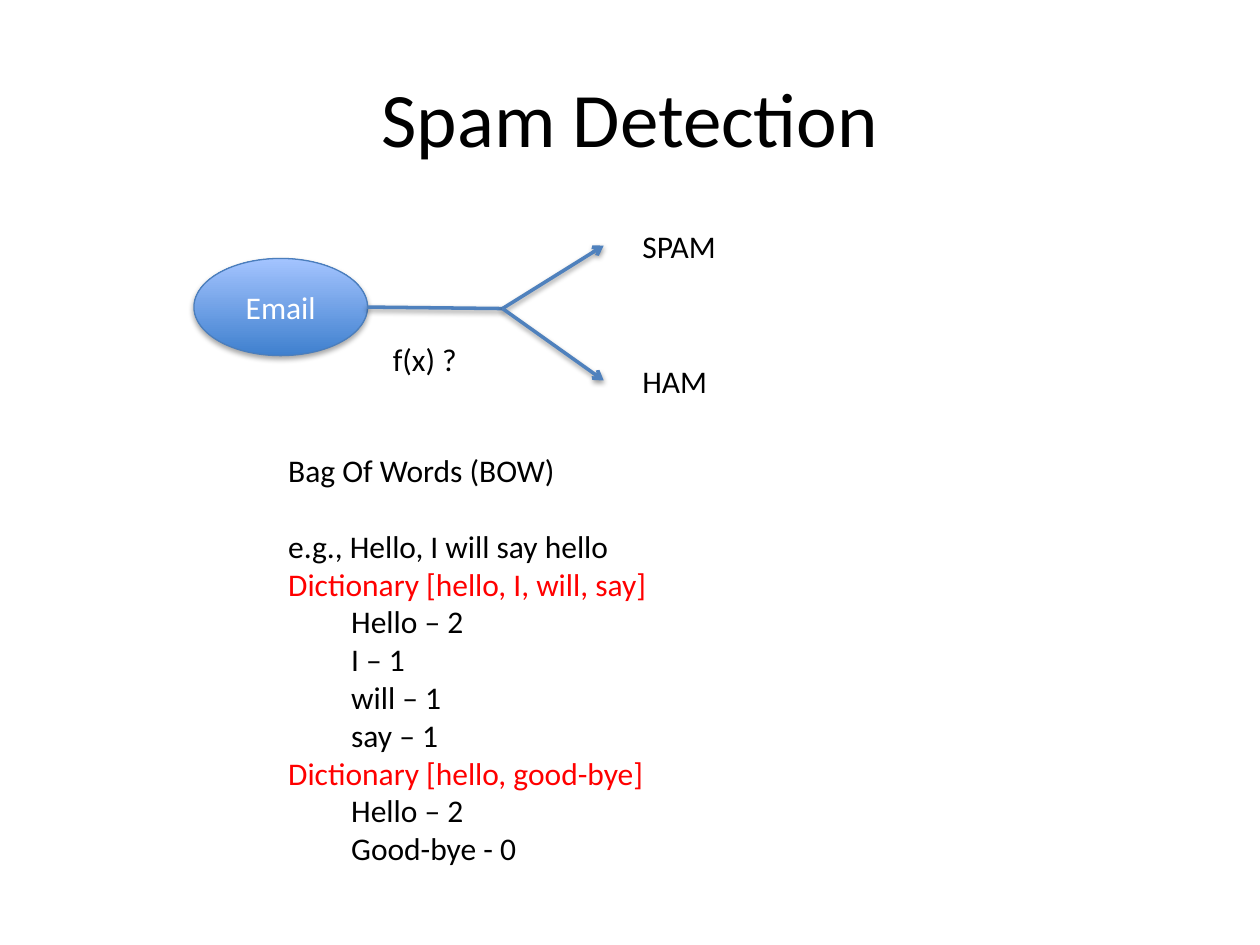
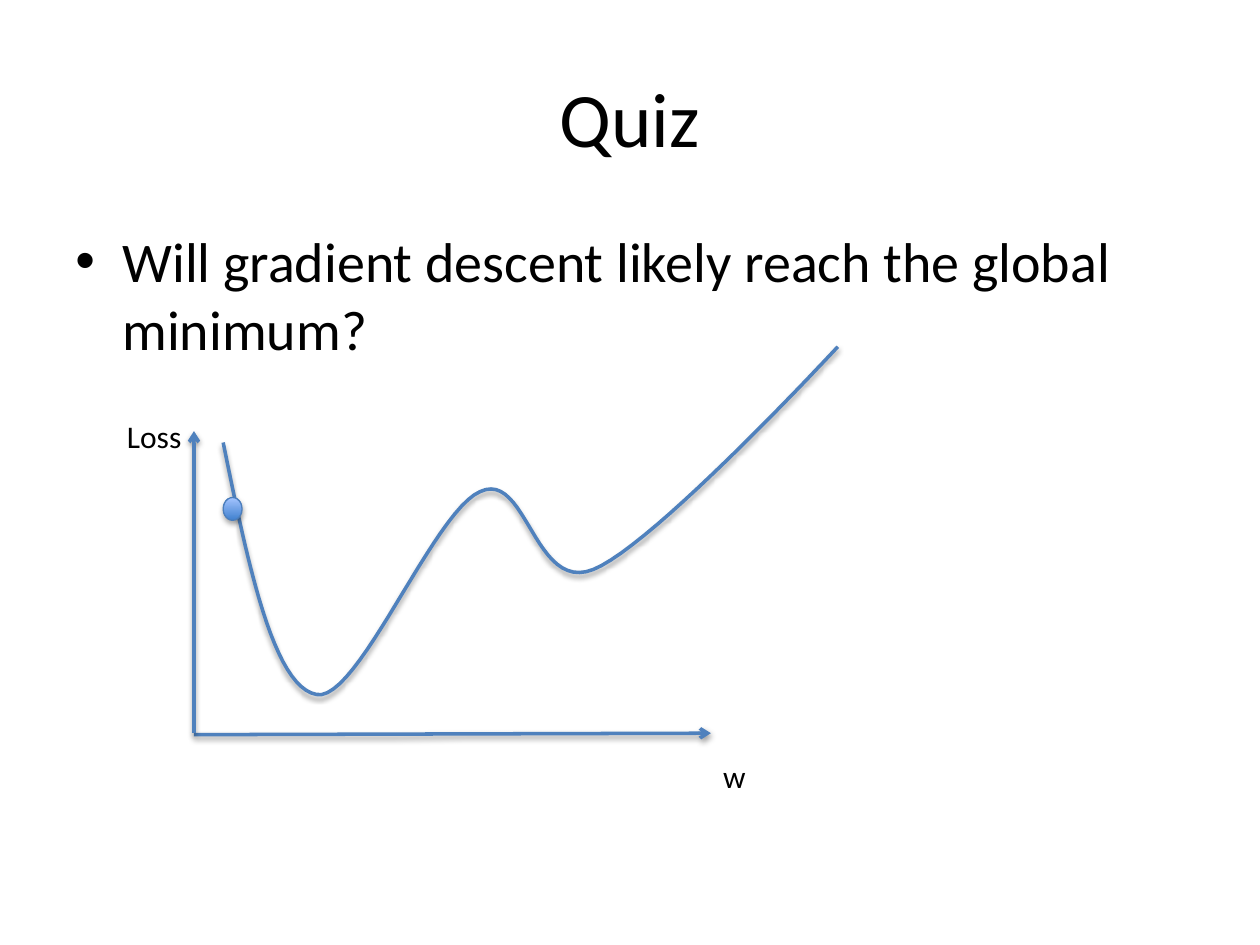
from lxml import etree
from pptx import Presentation
from pptx.dml.color import RGBColor
from pptx.enum.shapes import MSO_CONNECTOR, MSO_SHAPE
from pptx.enum.text import MSO_ANCHOR, PP_ALIGN
from pptx.oxml.ns import qn
from pptx.util import Cm, Pt

BLACK = RGBColor(0x00, 0x00, 0x00)
WHITE = RGBColor(0xFF, 0xFF, 0xFF)
RED = RGBColor(0xFF, 0x00, 0x00)
BLUE = RGBColor(0x4F, 0x81, 0xBD)
RIM_BLUE = RGBColor(0x4B, 0x7E, 0xBC)
DEEP_BLUE = RGBColor(0x3F, 0x80, 0xCE)
PALE_BLUE = RGBColor(0xA4, 0xC4, 0xFF)

FONT = "Calibri"
TITLE_BOX = (1.27, 0.76, 22.86, 3.18)
LABEL_HEIGHT = 1.03
OVAL_SHADOW = {"alpha": 35, "distance": 1.8}
LINE_SHADOW = {"alpha": 38, "distance": 1.6}

# Lengths are in centimetres; boxes are left, top, width, height.
SPAM_TITLE = "Spam Detection"
EMAIL, EMAIL_BOX = "Email", (3.91, 5.21, 3.5, 1.96)
FORK = (10.13, 6.22)
SPAM_ARROWS = [
    ((7.4, 6.19), FORK, False),
    (FORK, (12.17, 4.95), True),
    (FORK, (12.17, 7.67), True),
]
SPAM_LABELS = [
    ("SPAM", 12.7, 4.45, 2.06),
    ("HAM", 12.7, 7.18, 1.83),
    ("f(x) ?", 7.67, 6.73, 1.83),
]
BAG_BOX = (5.56, 8.97, 7.82, 8.71)
BAG_HEADING = "Bag Of Words (BOW)"
BAG_EXAMPLE = "e.g., Hello, I will say hello"
DICTIONARIES = [
    ("Dictionary [hello, I, will, say]", ["Hello – 2", "I – 1", "will – 1", "say – 1"]),
    ("Dictionary [hello, good-bye]", ["Hello – 2", "Good-bye - 0"]),
]

QUIZ_TITLE = "Quiz"
QUESTION = "Will gradient descent likely reach the global minimum?"
QUESTION_BOX = (1.27, 4.45, 22.86, 6.05)
QUIZ_LABELS = [("Loss", 2.31, 8.28, 1.63), ("w", 14.33, 15.14, 0.97)]
AXES = [
    ((3.91, 14.81), (14.33, 14.78), True),
    ((3.91, 14.78), (3.91, 8.69), True),
]
LOSS_START = (4.5, 8.92)
LOSS_CURVE = [  # two control points and an end point for each stretch
    ((5.0, 11.38), (5.51, 13.84), (6.38, 14.0)),
    ((7.21, 14.17), (8.74, 10.31), (9.68, 9.91)),
    ((10.62, 9.47), (10.77, 11.96), (11.96, 11.48)),
    ((13.18, 11.0), (16.89, 6.99), (16.89, 6.99)),
]
CURVE_STEPS = 24
START_BALL_BOX = (4.5, 10.03, 0.38, 0.46)


def set_attributes(target, values):
    for name, value in values.items():
        setattr(target, name, value)


def write(frame, lines, size=18, **paragraph_format):
    """Fill a frame with (text, colour, extra paragraph format) lines."""
    for number, (text, colour, extra) in enumerate(lines):
        paragraph = frame.add_paragraph() if number else frame.paragraphs[0]
        set_attributes(paragraph, paragraph_format)
        run = paragraph.add_run()
        run.text = text
        set_attributes(run.font, {"name": FONT, "size": Pt(size)})
        run.font.color.rgb = colour
        for name, value in extra.items():
            paragraph._p.get_or_add_pPr().set(name, str(value))


def add_text(slide, box, lines, wrap=False, anchor=MSO_ANCHOR.TOP, **text_format):
    frame = slide.shapes.add_textbox(*map(Cm, box)).text_frame
    set_attributes(frame, {"word_wrap": wrap, "vertical_anchor": anchor})
    write(frame, lines, **text_format)
    return frame


def add_labels(slide, labels):
    for text, left, top, width in labels:
        add_text(slide, (left, top, width, LABEL_HEIGHT), [(text, BLACK, {})])


def add_shadow(part, alpha, distance):
    """Cast a soft black shadow straight down; call after the line is set."""
    properties = part._element.spPr
    for old in properties.findall(qn("a:effectLst")):
        properties.remove(old)
    effects = etree.SubElement(properties, qn("a:effectLst"))
    shadow = etree.SubElement(
        effects, qn("a:outerShdw"), blurRad=str(Pt(3.1)),
        dist=str(Pt(distance)), dir="5400000", rotWithShape="0",
    )
    black = etree.SubElement(shadow, qn("a:srgbClr"), val="000000")
    etree.SubElement(black, qn("a:alpha"), val=str(alpha * 1000))


def style_line(part, colour=BLUE, width=2):
    part.line.color.rgb = colour
    part.line.width = Pt(width)


def add_arrows(slide, arrows):
    for start, end, has_head in arrows:
        arrow = slide.shapes.add_connector(
            MSO_CONNECTOR.STRAIGHT, *map(Cm, start + end))
        style_line(arrow)
        if has_head:
            etree.SubElement(arrow.line._get_or_add_ln(), qn("a:tailEnd"), type="arrow")
        add_shadow(arrow, **LINE_SHADOW)


def add_oval(slide, box):
    oval = slide.shapes.add_shape(MSO_SHAPE.OVAL, *map(Cm, box))
    oval.fill.gradient()
    oval.fill.gradient_angle = 90
    for stop, colour in zip(oval.fill.gradient_stops, (DEEP_BLUE, PALE_BLUE)):
        stop.color.rgb = colour
    style_line(oval, RIM_BLUE, 0.75)
    add_shadow(oval, **OVAL_SHADOW)
    return oval


def bezier_point(t, *controls):
    weights = ((1 - t) ** 3, 3 * t * (1 - t) ** 2, 3 * t * t * (1 - t), t ** 3)
    return tuple(
        Cm(sum(weight * value for weight, value in zip(weights, values)))
        for values in zip(*controls)
    )


def add_loss_curve(slide):
    points, start = [], LOSS_START
    for stretch in LOSS_CURVE:
        points += [bezier_point(step / CURVE_STEPS, start, *stretch)
                   for step in range(1, CURVE_STEPS + 1)]
        start = stretch[-1]
    builder = slide.shapes.build_freeform(*map(Cm, LOSS_START))
    builder.add_line_segments(points, close=False)
    curve = builder.convert_to_shape()
    curve.fill.background()
    style_line(curve)
    add_shadow(curve, **LINE_SHADOW)


def add_titled_slide(deck, title):
    slide = deck.slides.add_slide(deck.slide_layouts[6])
    add_text(slide, TITLE_BOX, [(title, BLACK, {})], wrap=True,
             anchor=MSO_ANCHOR.MIDDLE, size=44, alignment=PP_ALIGN.CENTER)
    return slide


def build_spam_slide(deck):
    slide = add_titled_slide(deck, SPAM_TITLE)
    email = add_oval(slide, EMAIL_BOX).text_frame
    email.vertical_anchor = MSO_ANCHOR.MIDDLE
    write(email, [(EMAIL, WHITE, {})], alignment=PP_ALIGN.CENTER)
    add_arrows(slide, SPAM_ARROWS)
    add_labels(slide, SPAM_LABELS)

    lines = [(BAG_HEADING, BLACK, {}), (BAG_EXAMPLE, BLACK, {})]
    for dictionary, counts in DICTIONARIES:
        lines.append((dictionary, RED, {}))
        lines += [(count, BLACK, {"marL": Cm(1.27)}) for count in counts]
    bag = add_text(slide, BAG_BOX, lines)
    bag.paragraphs[1].space_before = Pt(21.6)


def build_quiz_slide(deck):
    slide = add_titled_slide(deck, QUIZ_TITLE)
    hanging = {"marL": Cm(0.95), "indent": -Cm(0.95)}
    question = add_text(slide, QUESTION_BOX, [(QUESTION, BLACK, hanging)],
                        wrap=True, size=32, space_before=Pt(6.4))
    properties = question.paragraphs[0]._p.get_or_add_pPr()
    etree.SubElement(properties, qn("a:buFont"), typeface="Arial")
    etree.SubElement(properties, qn("a:buChar"), char="•")
    add_arrows(slide, AXES)
    add_loss_curve(slide)
    add_labels(slide, QUIZ_LABELS)
    add_oval(slide, START_BALL_BOX)


def main():
    deck = Presentation()
    set_attributes(deck, {"slide_width": Cm(25.4), "slide_height": Cm(19.05)})
    build_spam_slide(deck)
    build_quiz_slide(deck)
    deck.save("out.pptx")


if __name__ == "__main__":
    main()
